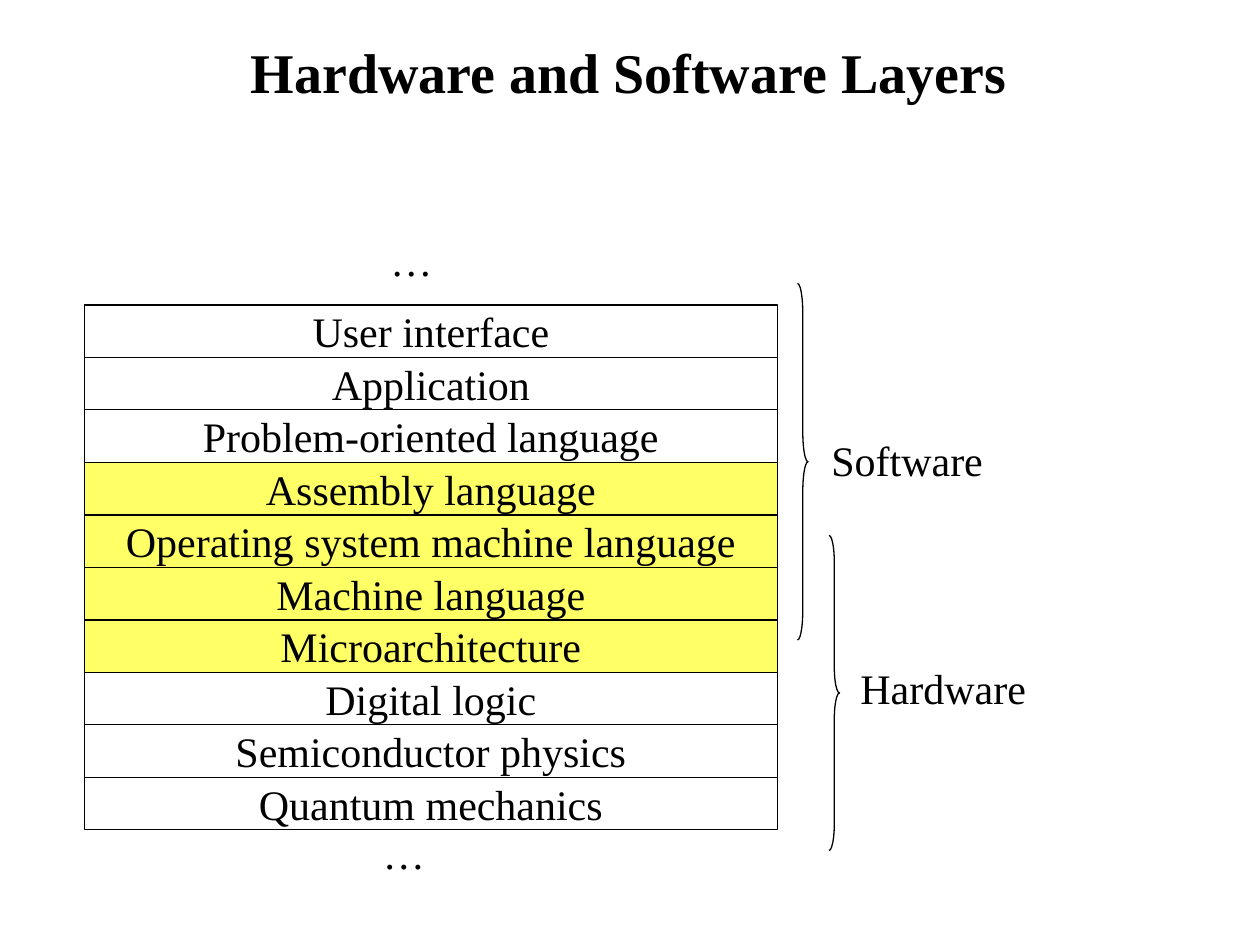
import pptx
import pptx.dml.color
import pptx.enum.shapes
import pptx.enum.text
import pptx.util

Inches = pptx.util.Inches
Pt = pptx.util.Pt
SHAPE = pptx.enum.shapes.MSO_SHAPE
ALIGN = pptx.enum.text.PP_ALIGN
ANCHOR = pptx.enum.text.MSO_ANCHOR

TITLE = "Hardware and Software Layers"
LAYERS = [  # name, highlighted
    ("User interface", False),
    ("Application", False),
    ("Problem-oriented language", False),
    ("Assembly language", True),
    ("Operating system machine language", True),
    ("Machine language", True),
    ("Microarchitecture", True),
    ("Digital logic", False),
    ("Semiconductor physics", False),
    ("Quantum mechanics", False),
]
BRACES = [(6.33, 2.25, 2.83), (6.58, 4.25, 2.5)]  # left, top, height
LABELS = [  # text, left, top, width
    ("…", 3, 1.81, 0.53),
    ("…", 2.94, 6.52, 0.53),
    ("Software", 6.5, 3.4, 1.4),
    ("Hardware", 6.73, 5.21, 1.52),
]
STACK_LEFT, STACK_TOP, STACK_WIDTH = 0.67, 2.42, 5.5
LAYER_HEIGHT = 5 / 12
BRACE_WIDTH = 1 / 12
LABEL_HEIGHT = 0.5

THEME = {
    "ink": pptx.dml.color.RGBColor.from_string("000000"),
    "highlight": pptx.dml.color.RGBColor.from_string("FFFF66"),
    "line": Pt(0.75),
    "title": {"name": "Times New Roman", "size": Pt(32), "bold": True},
    "body": {"name": "Times New Roman", "size": Pt(24), "bold": False},
}


def write(shape, text, style, align, anchor, wrap=False):
    tf = shape.text_frame
    tf.word_wrap = wrap
    tf.vertical_anchor = anchor
    p = tf.paragraphs[0]
    p.alignment = align
    r = p.add_run()
    r.text = text
    for name, value in THEME[style].items():
        setattr(r.font, name, value)
    r.font.color.rgb = THEME["ink"]


def add_outline(s, kind, left, top, width, height):
    sp = s.shapes.add_shape(kind, *map(Inches, (left, top, width, height)))
    sp.shadow.inherit = False
    sp.fill.background()
    sp.line.color.rgb = THEME["ink"]
    sp.line.width = THEME["line"]
    return sp


def add_layers(s):
    for i, (name, highlighted) in enumerate(LAYERS):
        sp = add_outline(s, SHAPE.RECTANGLE, STACK_LEFT,
                         STACK_TOP + i * LAYER_HEIGHT, STACK_WIDTH, LAYER_HEIGHT)
        if highlighted:
            sp.fill.solid()
            sp.fill.fore_color.rgb = THEME["highlight"]
        write(sp, name, "body", ALIGN.CENTER, ANCHOR.MIDDLE)


def add_braces(s):
    for left, top, height in BRACES:
        sp = add_outline(s, SHAPE.RIGHT_BRACE, left, top, BRACE_WIDTH, height)
        sp.adjustments[0] = height / 12 / BRACE_WIDTH
        sp.adjustments[1] = 0.5


def add_labels(s):
    for text, left, top, width in LABELS:
        box = s.shapes.add_textbox(*map(Inches, (left, top, width, LABEL_HEIGHT)))
        write(box, text, "body", ALIGN.LEFT, ANCHOR.TOP)
        box.text_frame.auto_size = pptx.enum.text.MSO_AUTO_SIZE.SHAPE_TO_FIT_TEXT


def main():
    prs = pptx.Presentation()
    prs.slide_width, prs.slide_height = Inches(10), Inches(7.5)
    s = prs.slides.add_slide(prs.slide_layouts[5])
    title = s.shapes.title
    title.left, title.top, title.width, title.height = map(
        Inches, (0.74, 0.06, 8.5, 1.01))
    write(title, TITLE, "title", ALIGN.CENTER, ANCHOR.MIDDLE, wrap=True)
    add_layers(s)
    add_braces(s)
    add_labels(s)
    prs.save("out.pptx")


if __name__ == "__main__":
    main()
